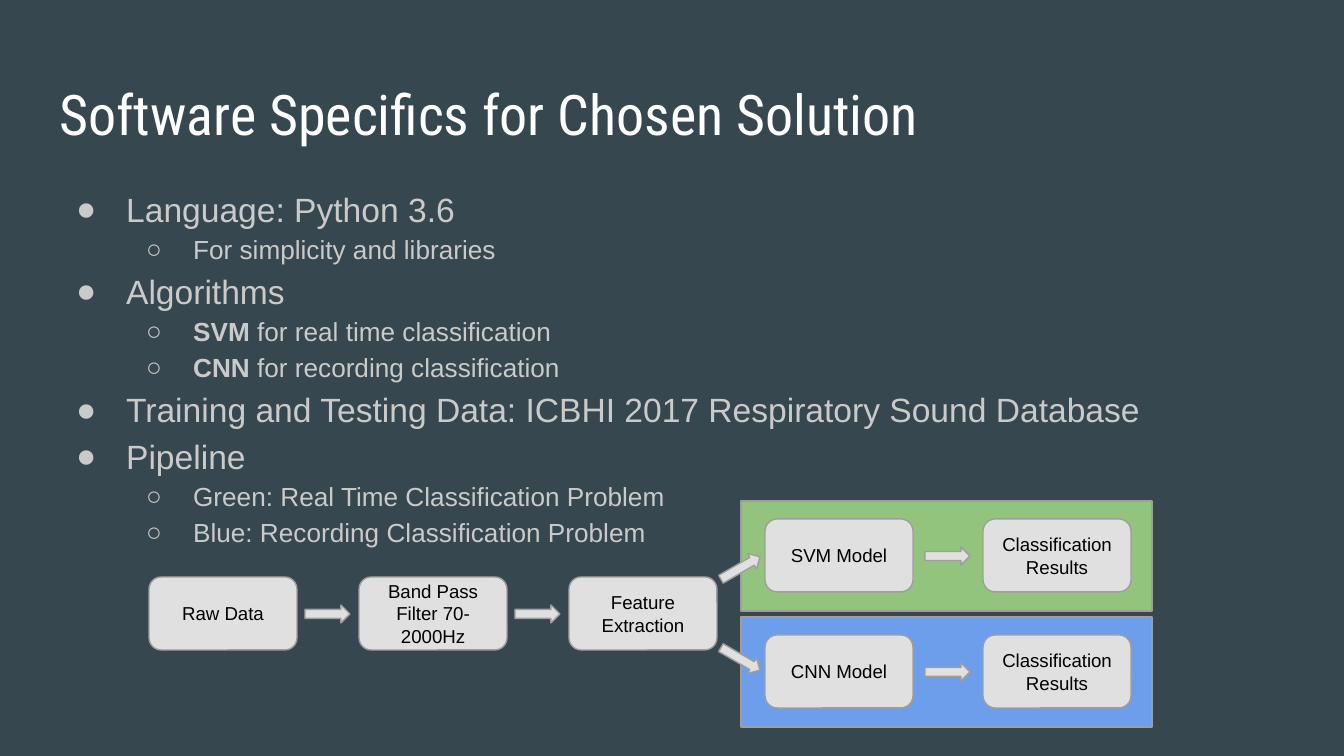
"""Build the slide on the software pipeline for sound classification."""
from lxml import etree
from pptx import Presentation
from pptx import util as u
from pptx.dml.color import RGBColor
from pptx.enum import shapes, text
from pptx.oxml.ns import qn

PX = 914400 / 134.4
SLATE = RGBColor(0x37, 0x47, 0x4F)
WHITE = RGBColor(0xFF, 0xFF, 0xFF)
BLACK = RGBColor(0, 0, 0)
SILVER = RGBColor(0xCA, 0xCA, 0xCA)
PALE = RGBColor(0xE0, 0xE0, 0xE0)
GREY = RGBColor(0x9E, 0x9E, 0x9E)
GREEN = RGBColor(0x93, 0xC4, 0x7D)
BLUE = RGBColor(0x6D, 0x9E, 0xEB)

BULLETS = [
    (0, "", "Language: Python 3.6"),
    (1, "", "For simplicity and libraries"),
    (0, "", "Algorithms"),
    (1, "SVM", " for real time classification"),
    (1, "CNN", " for recording classification"),
    (0, "", "Training and Testing Data: ICBHI 2017 Respiratory Sound Database"),
    (0, "", "Pipeline"),
    (1, "", "Green: Real Time Classification Problem"),
    (1, "", "Blue: Recording Classification Problem"),
]
LEVELS = [("●", 18, 67, -50), ("○", 14, 134, -47)]
STAGES = ["Raw Data", "Band Pass Filter 70-2000Hz", "Feature Extraction"]
BRANCHES = [("SVM Model", GREEN, 501, 559, -30), ("CNN Model", BLUE, 617, 650, 30)]


def px(*lengths):
    return [u.Emu(round(length * PX)) for length in lengths]


class Painter:
    """Hold the deck style and the current slide."""

    def __init__(self, width, height):
        self.deck = Presentation()
        self.deck.slide_width, self.deck.slide_height = px(width, height)
        self.page = self.deck.slides.add_slide(self.deck.slide_layouts[6])
        self.page.background.fill.solid()
        self.page.background.fill.fore_color.rgb = SLATE

    def font(self, para, size, color, name="Arial"):
        para.font.size = u.Pt(size)
        para.font.name = name
        para.font.color.rgb = color

    def frame(self, box):
        frame = box.text_frame
        frame.word_wrap = True
        frame.margin_left = frame.margin_right = u.Inches(0.1)
        frame.margin_top = frame.margin_bottom = u.Inches(0.1)
        return frame

    def title(self, words, *place):
        para = self.frame(self.page.shapes.add_textbox(*px(*place))).paragraphs[0]
        para.text = words
        self.font(para, 30, WHITE, "Roboto Condensed")

    def bullets(self, items, *place):
        frame = self.frame(self.page.shapes.add_textbox(*px(*place)))
        for index, (level, strong, words) in enumerate(items):
            para = frame.add_paragraph() if index else frame.paragraphs[0]
            self.bullet(para, level)
            if strong:
                span = para.add_run()
                span.text = strong
                span.font.bold = True
            para.add_run().text = words

    def bullet(self, para, level):
        mark, size, margin, indent = LEVELS[level]
        para.level = level
        para.line_spacing = 1.15
        props = para._p.get_or_add_pPr()
        for key, length in zip(("marL", "indent"), px(margin, indent)):
            props.set(key, str(length))
        tint = etree.SubElement(props, qn("a:buClr"))
        etree.SubElement(tint, qn("a:srgbClr"), val=str(SILVER))
        etree.SubElement(props, qn("a:buFont"), typeface="Arial")
        etree.SubElement(props, qn("a:buChar"), char=mark)
        self.font(para, size, SILVER)

    def shape(self, kind, fill, *place):
        shape = self.page.shapes.add_shape(kind, *px(*place))
        shape.shadow.inherit = False
        shape.fill.solid()
        shape.fill.fore_color.rgb = fill
        shape.line.color.rgb = GREY
        shape.line.width = u.Pt(0.75)
        return shape

    def band(self, fill, left, top):
        self.shape(shapes.MSO_SHAPE.RECTANGLE, fill, left, top, 411, 110)

    def step(self, words, left, top):
        box = self.shape(shapes.MSO_SHAPE.ROUNDED_RECTANGLE, PALE, left, top, 148, 73)
        frame = self.frame(box)
        frame.vertical_anchor = text.MSO_ANCHOR.MIDDLE
        para = frame.paragraphs[0]
        para.text = words
        para.alignment = text.PP_ALIGN.CENTER
        self.font(para, 10, BLACK)

    def arrow(self, left, top, turn=0):
        arrow = self.shape(shapes.MSO_SHAPE.RIGHT_ARROW, PALE, left, top, 45, 18)
        arrow.rotation = turn


def main():
    painter = Painter(1344, 756)
    painter.title("Software Specifics for Chosen Solution", 46, 66, 1253, 85)
    painter.bullets(BULLETS, 46, 169, 1253, 503)
    for index, words in enumerate(STAGES):
        left = 149 + 210 * index
        painter.step(words, left, 577)
        if index < len(STAGES) - 1:
            painter.arrow(left + 156, 605)
    for model, fill, top, arrow_top, turn in BRANCHES:
        painter.band(fill, 741, top)
        painter.arrow(718, arrow_top, turn)
        painter.step(model, 765, top + 18)
        painter.arrow(925, top + 46)
        painter.step("Classification Results", 983, top + 18)
    painter.deck.save("out.pptx")


if __name__ == "__main__":
    main()
